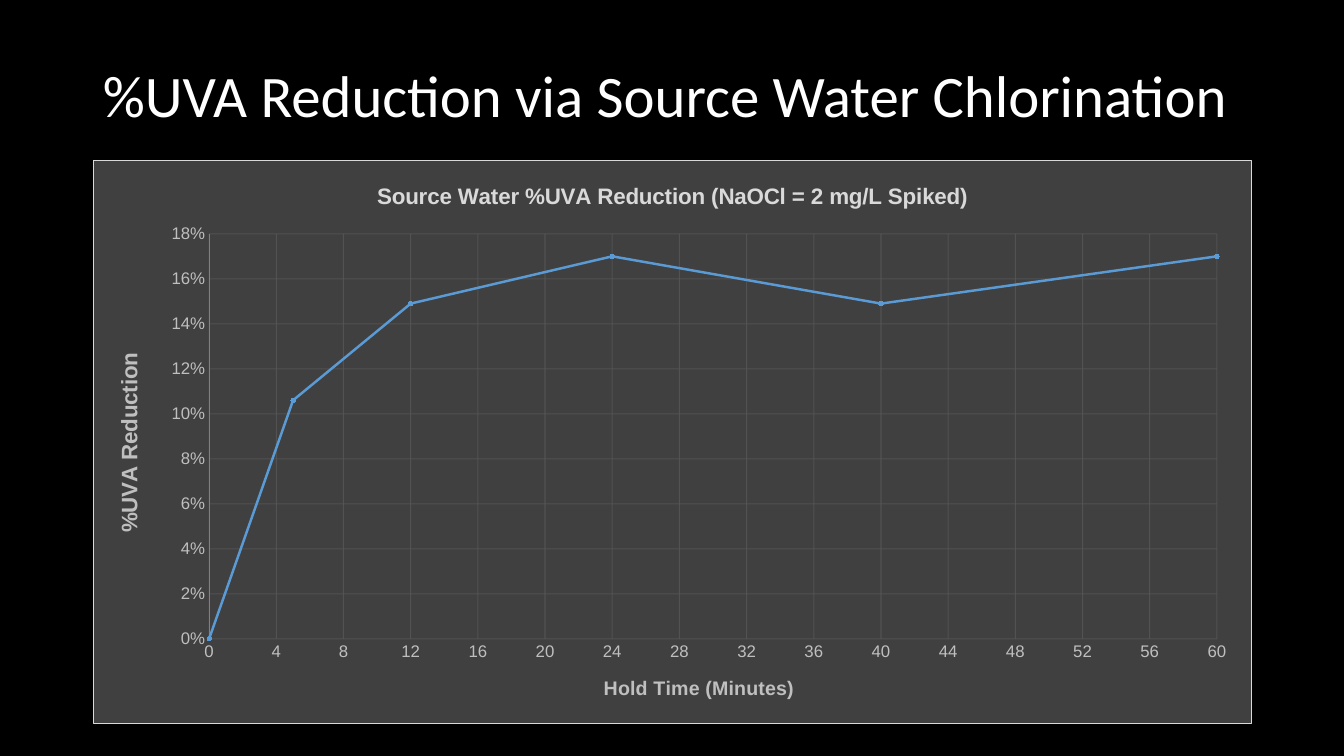
from dataclasses import dataclass

from lxml import etree
from pptx import Presentation
from pptx.chart.data import XyChartData
from pptx.dml.color import RGBColor
from pptx.enum.chart import XL_CHART_TYPE, XL_MARKER_STYLE, XL_TICK_MARK
from pptx.enum.text import MSO_ANCHOR, MSO_AUTO_SIZE, PP_ALIGN
from pptx.oxml import parse_xml
from pptx.oxml.ns import nsdecls, qn
from pptx.util import Inches, Pt

SCATTER = XL_CHART_TYPE.XY_SCATTER_LINES
CIRCLE = XL_MARKER_STYLE.CIRCLE
NO_TICK = XL_TICK_MARK.NONE
BOTTOM = MSO_ANCHOR.BOTTOM
NO_FIT = MSO_AUTO_SIZE.NONE
LEFT = PP_ALIGN.LEFT

BLACK = RGBColor(0x00, 0x00, 0x00)
WHITE = RGBColor(0xFF, 0xFF, 0xFF)
PANEL = RGBColor(0x40, 0x40, 0x40)
PALE_GREY = RGBColor(0xD9, 0xD9, 0xD9)
LABEL_GREY = RGBColor(0xBF, 0xBF, 0xBF)
AXIS_GREY = RGBColor(0x80, 0x80, 0x80)
GRID_GREY = RGBColor(0x59, 0x59, 0x59)
BLUE = RGBColor(0x5B, 0x9B, 0xD5)
LIGHT_BLUE = RGBColor(0x9D, 0xC3, 0xE6)


@dataclass
class AxisSpec:
    title: str
    title_size: int
    maximum: float
    step: float
    number_format: str
    line: RGBColor | None = None
    rotation: int = 0


TIME_AXIS = AxisSpec("Hold Time (Minutes)", 14, 60, 4, "General")
REDUCTION_AXIS = AxisSpec("%UVA Reduction", 16, 0.18, 0.02, "0%", AXIS_GREY, -5400000)
READINGS = [(0, 0), (5, 0.106), (12, 0.149), (24, 0.17), (40, 0.149), (60, 0.17)]
PLOT_LAYOUT = {"x": 0.1, "y": 0.13, "w": 0.87, "h": 0.72}


def style_font(font, name: str, size: int, color: RGBColor, bold: bool = False) -> None:
    font.name = name
    font.size = Pt(size)
    font.bold = bold
    font.color.rgb = color


def set_chart_text(tf, text: str, size: int, color: RGBColor) -> None:
    tf.text = text
    style_font(tf.paragraphs[0].runs[0].font, "Arial", size, color, True)


def style_axis(axis, spec: AxisSpec) -> None:
    axis.minimum_scale = 0
    axis.maximum_scale = spec.maximum
    axis.major_unit = spec.step
    axis.major_tick_mark = axis.minor_tick_mark = NO_TICK
    axis.tick_labels.number_format = spec.number_format
    axis.tick_labels.number_format_is_linked = False
    style_font(axis.tick_labels.font, "Arial", 12, LABEL_GREY)

    tf = axis.axis_title.text_frame
    set_chart_text(tf, spec.title, spec.title_size, LABEL_GREY)
    body = axis.axis_title._element.find(".//" + qn("a:bodyPr"))
    body.set("rot", str(spec.rotation))
    body.set("vert", "horz")

    if spec.line is None:
        axis.format.line.fill.background()
    else:
        axis.format.line.color.rgb = spec.line
        axis.format.line.width = Pt(0.75)

    axis.has_major_gridlines = True
    grid = axis.major_gridlines
    grid.format.line.color.rgb = GRID_GREY
    grid.format.line.width = Pt(0.75)
    grid_color = axis._element.find(qn("c:majorGridlines")).find(".//" + qn("a:srgbClr"))
    etree.SubElement(grid_color, qn("a:alpha")).set("val", "75000")


def fill_chart_panel(chart, fill: RGBColor, border: RGBColor) -> None:
    panel = parse_xml(
        f'<c:spPr {nsdecls("c", "a")}>'
        f'<a:solidFill><a:srgbClr val="{fill}"/></a:solidFill>'
        f'<a:ln w="{Pt(0.75)}"><a:solidFill><a:srgbClr val="{border}"/></a:solidFill></a:ln>'
        "</c:spPr>"
    )
    chart._chartSpace.find(qn("c:chart")).addnext(panel)


def place_plot(chart, layout: dict[str, float]) -> None:
    plot = chart._chartSpace.find(".//" + qn("c:plotArea"))
    for old in plot.findall(qn("c:layout")):
        plot.remove(old)
    box = etree.Element(qn("c:layout"))
    manual = etree.SubElement(box, qn("c:manualLayout"))
    settings = {"layoutTarget": "inner", "xMode": "edge", "yMode": "edge", **layout}
    for name, value in settings.items():
        etree.SubElement(manual, qn(f"c:{name}")).set("val", str(value))
    plot.insert(0, box)


def add_title(s) -> None:
    title = s.shapes.title
    title.left, title.top = Inches(0.92), Inches(0.32)
    title.width, title.height = Inches(11.5), Inches(1.02)
    tf = title.text_frame
    tf.text = "%UVA Reduction via Source Water Chlorination"
    tf.word_wrap = True
    tf.auto_size = NO_FIT
    tf.vertical_anchor = BOTTOM
    p = tf.paragraphs[0]
    p.alignment = LEFT
    p.line_spacing = 0.9
    style_font(p.runs[0].font, "Calibri", 42, WHITE)


def add_reduction_chart(s) -> None:
    data = XyChartData()
    points = data.add_series("Series 1")
    for minutes, reduction in READINGS:
        points.add_data_point(minutes, reduction)
    chart = s.shapes.add_chart(
        SCATTER, Inches(0.92), Inches(1.59), Inches(11.5), Inches(5.59), data
    ).chart
    style_font(chart.font, "Calibri", 10, WHITE)
    chart.has_legend = False
    chart.has_title = True
    set_chart_text(chart.chart_title.text_frame,
                   "Source Water %UVA Reduction (NaOCl = 2 mg/L Spiked)", 16, PALE_GREY)
    style_axis(chart.category_axis, TIME_AXIS)
    style_axis(chart.value_axis, REDUCTION_AXIS)
    fill_chart_panel(chart, PANEL, PALE_GREY)
    place_plot(chart, PLOT_LAYOUT)

    # Line and markers
    plot = chart.plots[0]
    plot.vary_by_categories = False
    series = plot.series[0]
    smooth = series._element.get_or_add_smooth()
    smooth.val = False
    series.format.line.color.rgb = BLUE
    series.format.line.width = Pt(1.75)
    marker = series.marker
    marker.style = CIRCLE
    marker.size = 3
    marker.format.fill.solid()
    marker.format.fill.fore_color.rgb = BLUE
    marker.format.line.color.rgb = LIGHT_BLUE


def main() -> None:
    prs = Presentation()
    prs.slide_width, prs.slide_height = Inches(13.33), Inches(7.5)
    s = prs.slides.add_slide(prs.slide_layouts.get_by_name("Title Only"))
    s.background.fill.solid()
    s.background.fill.fore_color.rgb = BLACK
    add_title(s)
    add_reduction_chart(s)
    prs.save("out.pptx")


if __name__ == "__main__":
    main()
